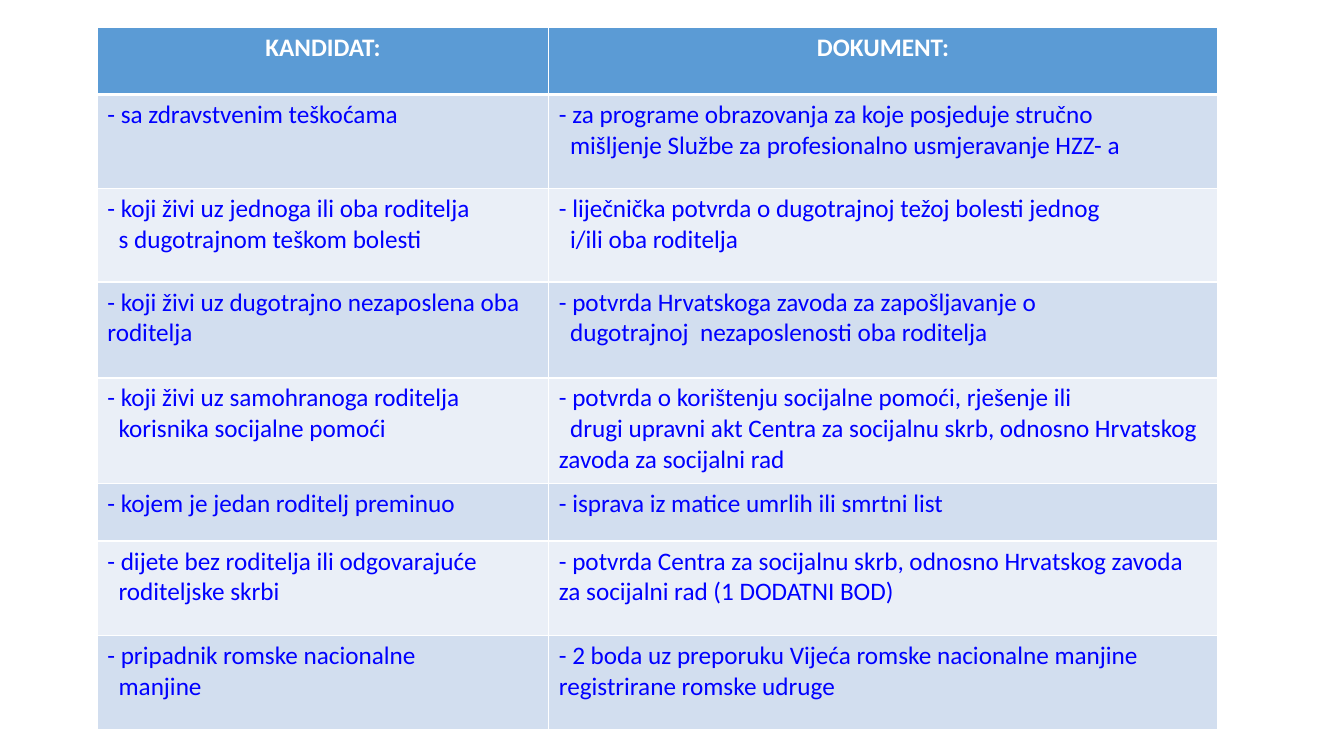
from lxml.etree import SubElement
from pptx import Presentation
from pptx.dml.color import RGBColor as Rgb
from pptx.enum.text import PP_ALIGN as Align
from pptx.oxml.ns import qn
from pptx.util import Pt

COLORS = {
    "header": "5B9BD5",
    "odd": "D2DEEF",
    "even": "EAEFF7",
    "line": "FFFFFF",
    "title": "FFFFFF",
    "text": "0000FF",
}
HEADINGS = ["KANDIDAT:", "DOKUMENT:"]
CRITERIA = [
    (["- sa zdravstvenim teškoćama"],
     ["- za programe obrazovanja za koje posjeduje stručno",
      "mišljenje Službe za profesionalno usmjeravanje HZZ- a"]),
    (["- koji živi uz jednoga ili oba roditelja", "s dugotrajnom teškom bolesti"],
     ["- liječnička potvrda o dugotrajnoj težoj bolesti jednog", "i/ili oba roditelja"]),
    (["- koji živi uz dugotrajno nezaposlena oba roditelja"],
     ["- potvrda Hrvatskoga zavoda za zapošljavanje o",
      "dugotrajnoj  nezaposlenosti oba roditelja"]),
    (["- koji živi uz samohranoga roditelja", "korisnika socijalne pomoći"],
     ["- potvrda o korištenju socijalne pomoći, rješenje ili",
      "drugi upravni akt Centra za socijalnu skrb, odnosno Hrvatskog zavoda za socijalni rad"]),
    (["- kojem je jedan roditelj preminuo"],
     ["- isprava iz matice umrlih ili smrtni list"]),
    (["- dijete bez roditelja ili odgovarajuće", "roditeljske skrbi"],
     ["- potvrda Centra za socijalnu skrb, odnosno Hrvatskog zavoda "
      "za socijalni rad (1 DODATNI BOD)"]),
    (["- pripadnik romske nacionalne", "manjine"],
     ["- 2 boda uz preporuku Vijeća romske nacionalne manjine registrirane romske udruge"]),
]
COLUMN_WIDTHS = [322.5, 477.5]
ROW_HEIGHTS = [48, 67, 67, 68.5, 75.5, 41, 67.5, 67.5]


class SlideBuilder:
    font, size, indent = "Calibri", 18, 8

    def __init__(self, slide):
        self.slide = slide

    def table(self, left, top, widths, heights):
        frame = self.slide.shapes.add_table(
            len(heights), len(widths), Pt(left), Pt(top), Pt(sum(widths)), Pt(sum(heights)))
        grid = frame.table
        for column, width in zip(grid.columns, widths):
            column.width = Pt(width)
        for row, height in zip(grid.rows, heights):
            row.height = Pt(height)
        return grid

    def borders(self, cell, **weights):
        properties = cell._tc.get_or_add_tcPr()
        for side in "LRTB":
            line = SubElement(properties, qn(f"a:ln{side}"), w=str(Pt(weights.get(side, 1))))
            paint = SubElement(line, qn("a:solidFill"))
            SubElement(paint, qn("a:srgbClr"), val=COLORS["line"])

    def cell(self, cell, lines, fill, color="text", bold=False, align=Align.LEFT, **weights):
        self.borders(cell, **weights)
        cell.fill.solid()
        cell.fill.fore_color.rgb = Rgb.from_string(COLORS[fill])
        for number, line in enumerate(lines):
            frame = cell.text_frame
            paragraph = frame.add_paragraph() if number else frame.paragraphs[0]
            paragraph.alignment = align
            if number:
                paragraph._p.get_or_add_pPr().set("indent", str(Pt(self.indent)))
            run = paragraph.add_run()
            run.text = line
            run.font.name = self.font
            run.font.size = Pt(self.size)
            run.font.bold = bold
            run.font.color.rgb = Rgb.from_string(COLORS[color])


def main():
    deck = Presentation()
    deck.slide_width, deck.slide_height = Pt(960), Pt(540)
    builder = SlideBuilder(deck.slides.add_slide(deck.slide_layouts[6]))
    criteria = builder.table(69.5, 19.5, COLUMN_WIDTHS, ROW_HEIGHTS)
    for column, heading in enumerate(HEADINGS):
        builder.cell(criteria.cell(0, column), [heading], "header", "title", True, Align.CENTER, B=3)
    for row, entries in enumerate(CRITERIA, 1):
        for column, lines in enumerate(entries):
            builder.cell(criteria.cell(row, column), lines, "odd" if row % 2 else "even",
                         T=3 if row == 1 else 1)
    deck.save("out.pptx")


if __name__ == "__main__":
    main()
